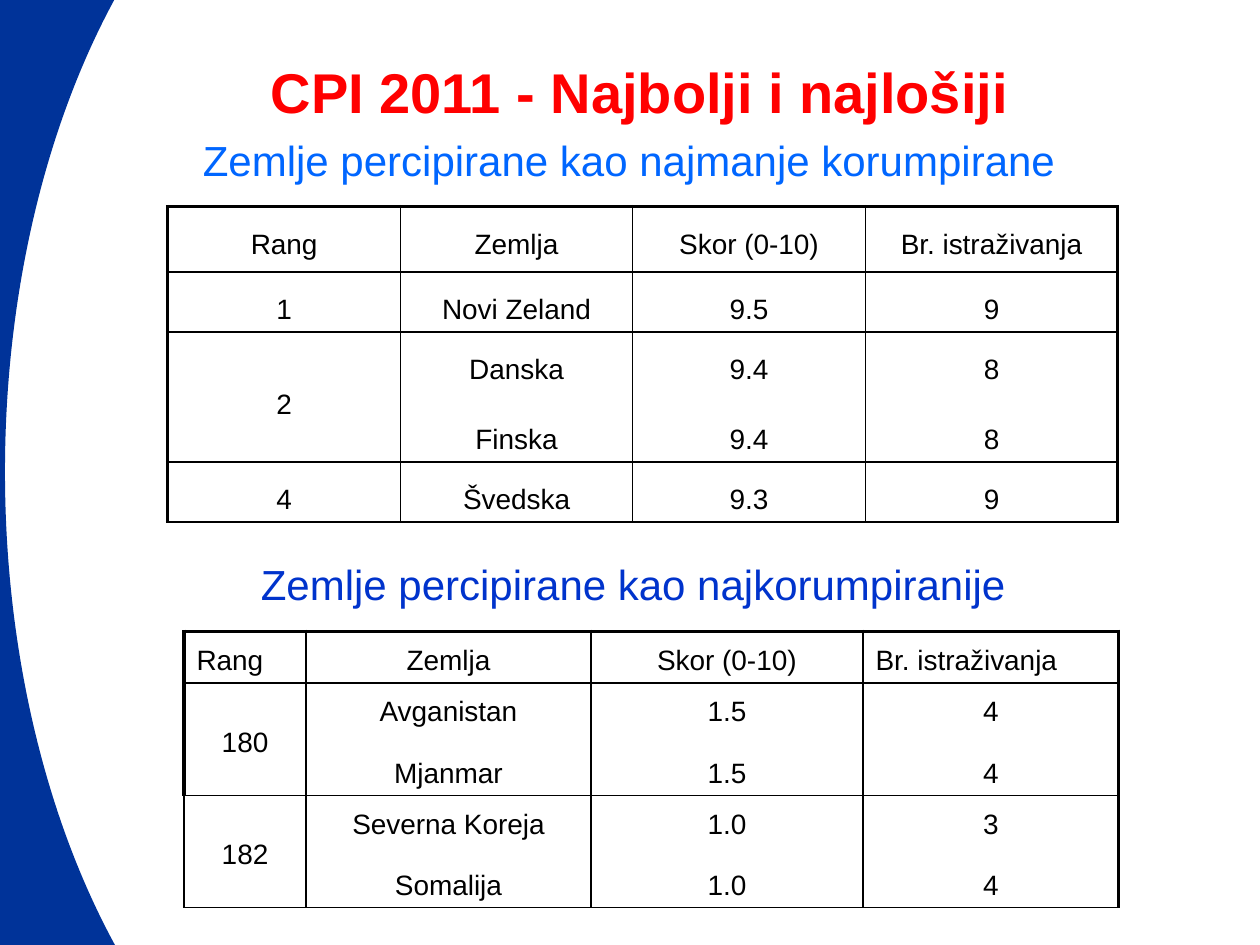
from dataclasses import dataclass

from lxml import etree
from pptx import Presentation
from pptx.dml.color import RGBColor
from pptx.enum import shapes, text
from pptx.oxml import ns
from pptx.util import Inches, Pt


@dataclass(frozen=True)
class Theme:
    font: str = "Arial"
    band: str = "003399"
    title: str = "FF0000"
    best: str = "0066FF"
    worst: str = "0033CC"
    ink: str = "000000"
    title_size: int = 32
    heading_size: int = 24
    cell_size: int = 16
    thick: float = 2.25
    thin: float = 1


THEME = Theme()
CENTER, LEFT = text.PP_ALIGN.CENTER, text.PP_ALIGN.LEFT

BEST_ROWS = [
    ["Rang", "Zemlja", "Skor (0-10)", "Br. istraživanja"],
    ["1", "Novi Zeland", "9.5", "9"],
    ["2", "Danska\nFinska", "9.4\n9.4", "8\n8"],
    ["4", "Švedska", "9.3", "9"],
]
WORST_ROWS = [
    ["Rang", "Zemlja", "Skor (0-10)", "Br. istraživanja"],
    ["180", "Avganistan\nMjanmar", "1.5\n1.5", "4\n4"],
    ["182", "Severna Koreja\nSomalija", "1.0\n1.0", "3\n4"],
]


def style_paragraph(paragraph, size, color, align, bold=False):
    paragraph.alignment = align
    for run in paragraph.runs:
        run.font.name = THEME.font
        run.font.size = Pt(size)
        run.font.bold = bold
        run.font.color.rgb = RGBColor.from_string(color)


def add_side_band(slide):
    band = slide.shapes.add_shape(
        shapes.MSO_SHAPE.MOON, Inches(-1.33), Inches(-0.67), Inches(2.67), Inches(8.83))
    band.adjustments[0] = 0.513
    band.shadow.inherit = False
    band.fill.solid()
    band.fill.fore_color.rgb = RGBColor.from_string(THEME.band)
    band.line.fill.background()
    slide.shapes.title._element.addprevious(band._element)


def set_title(slide, wording):
    title = slide.shapes.title
    title.left, title.top = Inches(0.83), Inches(0.28)
    title.width, title.height = Inches(8.5), Inches(0.83)
    frame = title.text_frame
    frame.text = wording
    frame.vertical_anchor = text.MSO_ANCHOR.MIDDLE
    paragraph = frame.paragraphs[0]
    paragraph.line_spacing = Pt(42)
    style_paragraph(paragraph, THEME.title_size, THEME.title, CENTER, bold=True)


def add_heading(slide, wording, left, top, width, height, color, align, inset=0.1):
    box = slide.shapes.add_textbox(
        Inches(left), Inches(top), Inches(width), Inches(height))
    frame = box.text_frame
    frame.word_wrap = True
    frame.margin_left = Inches(inset)
    frame.text = wording
    style_paragraph(frame.paragraphs[0], THEME.heading_size, color, align)


def set_borders(cell, widths):
    """Draw the left, right, top and bottom lines, with widths in points."""
    properties = cell._tc.get_or_add_tcPr()
    for side, width in zip("LRTB", widths):
        line = etree.SubElement(properties, ns.qn(f"a:ln{side}"), w=str(Pt(width)))
        fill = etree.SubElement(line, ns.qn("a:solidFill"))
        etree.SubElement(fill, ns.qn("a:srgbClr"), val=THEME.ink)


def add_ranking(slide, rows, left, top, widths, heights, line_spacing,
                left_aligned_headers=(), thin_left_rows=()):
    frame = slide.shapes.add_table(
        len(rows), len(widths), Inches(left), Inches(top),
        Inches(sum(widths)), Inches(sum(heights)))
    table = frame.table
    table.first_row = table.horz_banding = False
    for column, width in zip(table.columns, widths):
        column.width = Inches(width)
    for row, height in zip(table.rows, heights):
        row.height = Inches(height)

    last = len(widths) - 1
    for r, values in enumerate(rows):
        for c, value in enumerate(values):
            cell = table.cell(r, c)
            cell.text_frame.text = value
            if r > 0 and c == 0:
                cell.vertical_anchor = text.MSO_ANCHOR.MIDDLE
            align = LEFT if r == 0 and c in left_aligned_headers else CENTER
            for paragraph in cell.text_frame.paragraphs:
                paragraph.line_spacing = Pt(line_spacing)
                paragraph.space_after = Pt(13)
                style_paragraph(paragraph, THEME.cell_size, THEME.ink, align)
            outer = (c == 0 and r not in thin_left_rows, c == last, r == 0, False)
            set_borders(cell, [THEME.thick if edge else THEME.thin for edge in outer])
            cell.fill.background()


def main():
    presentation = Presentation()
    presentation.slide_width, presentation.slide_height = Inches(10), Inches(7.5)
    slide = presentation.slides.add_slide(presentation.slide_layouts[5])

    add_side_band(slide)
    add_ranking(slide, BEST_ROWS, 1.33, 1.64, [1.85, 1.84, 1.85, 2],
                [0.52, 0.47, 1.03, 0.47], line_spacing=27)
    set_title(slide, "CPI 2011 - Najbolji i najlošiji")
    add_heading(slide, "Zemlje percipirane kao najkorumpiranije",
                1.64, 4.38, 6.77, 0.51, THEME.worst, CENTER)
    add_heading(slide, "Zemlje percipirane kao najmanje korumpirane",
                1.33, 1.02, 7.42, 0.47, THEME.best, LEFT, inset=0.28)
    add_ranking(slide, WORST_ROWS, 1.46, 5.01, [0.97, 2.26, 2.16, 2.03],
                [0.41, 0.89, 0.89], line_spacing=22,
                left_aligned_headers=(0, 3), thin_left_rows=(2,))

    presentation.save("out.pptx")


if __name__ == "__main__":
    main()
